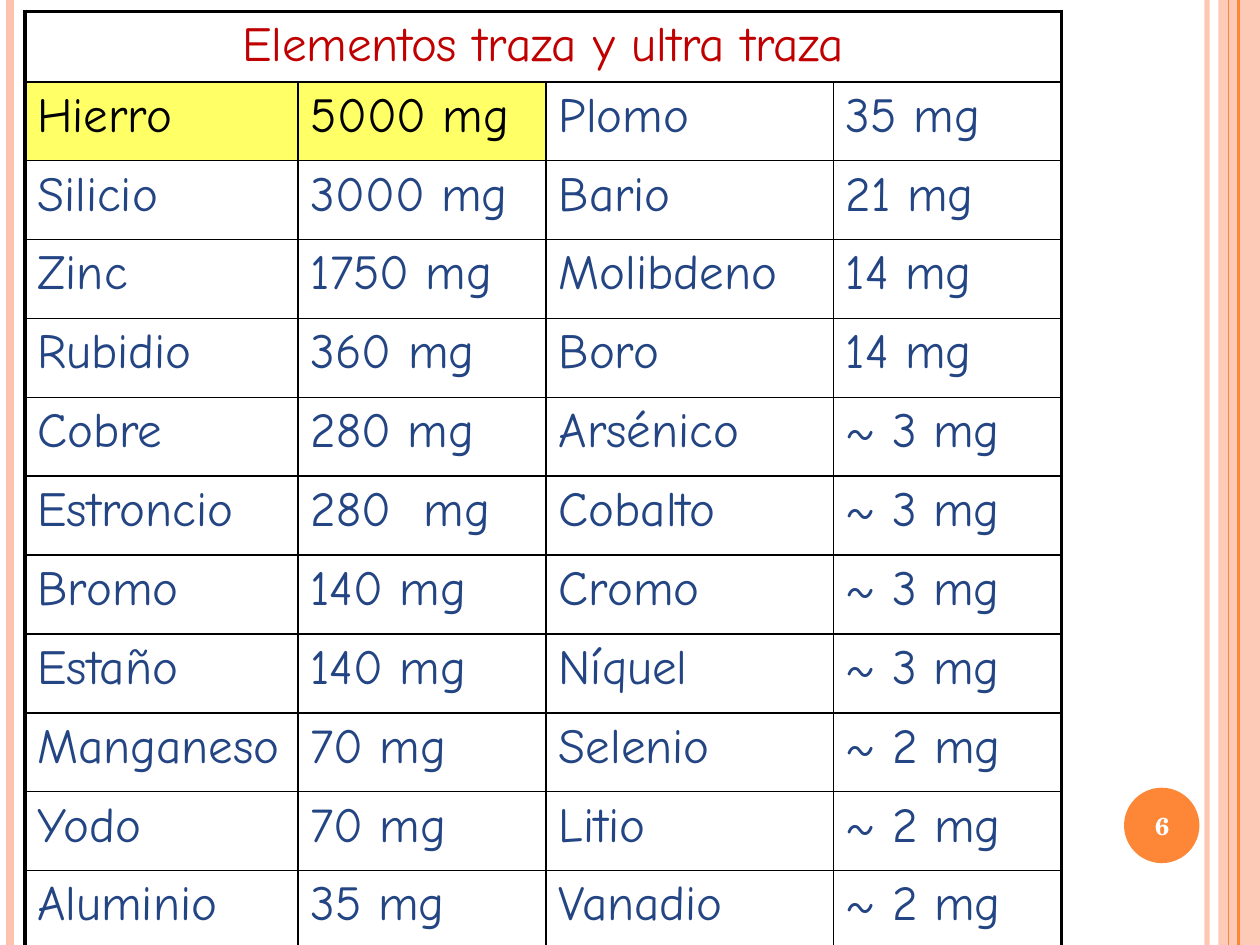
import pptx
import pptx.util
import pptx.dml.color
import pptx.enum.shapes
import pptx.enum.text
import pptx.oxml.ns
import lxml.etree as etree

Cm, Pt = pptx.util.Cm, pptx.util.Pt
ALIGN = pptx.enum.text.PP_ALIGN
SHAPE = pptx.enum.shapes.MSO_SHAPE
qn = pptx.oxml.ns.qn


def paint(fill, colour, opacity=100):
    fill.solid()
    fill.fore_color.rgb = pptx.dml.color.RGBColor.from_string(colour)
    if opacity < 100:
        tone = fill._xPr.find(qn("a:solidFill"))[0]
        etree.SubElement(tone, qn("a:alpha"), val=str(opacity * 1000))


def add_border(cell, side, width):
    line = etree.SubElement(cell._tc.get_or_add_tcPr(), qn("a:ln" + side), w=str(Pt(width)))
    solid = etree.SubElement(line, qn("a:solidFill"))
    etree.SubElement(solid, qn("a:srgbClr"), val="000000")


deck = pptx.Presentation()
deck.slide_width, deck.slide_height = Cm(25.4), Cm(19.05)
page = deck.slides.add_slide(deck.slide_layouts[6])

# Vertical stripes at both edges, with the band on the right
band = page.shapes.add_shape(SHAPE.RECTANGLE, Cm(24.56), 0, Cm(0.84), deck.slide_height)
paint(band.fill, "FEC3AE", 87)
stripes = [
    (24.33, "FEC3AE", 3, 93),
    (0.2, "FEC3AE", 4.5, 100),
    (24.97, "FE8637", 1.5, 100),
    (24.77, "FE8637", 0.75, 100),
]
for x, colour, width, opacity in stripes:
    stripe = page.shapes.add_connector(
        pptx.enum.shapes.MSO_CONNECTOR.STRAIGHT, Cm(x), 0, Cm(x), deck.slide_height)
    stripe.line.width = Pt(width)
    paint(stripe.line.fill, colour, opacity)
    etree.SubElement(stripe._element.spPr, qn("a:effectLst"))

# Disc behind the page number
disc = page.shapes.add_shape(SHAPE.OVAL, Cm(22.66), Cm(15.88), Cm(1.52), Cm(1.52))
paint(disc.fill, "FE8637")
for shape in (band, disc):
    shape.line.fill.background()
    shape.shadow.inherit = False

# Table of trace elements
rows = [
    ("Elementos traza y ultra traza", "", "", ""),
    ("Hierro", "5000 mg", "Plomo", "35 mg"),
    ("Silicio", "3000 mg", "Bario", "21 mg"),
    ("Zinc", "1750 mg", "Molibdeno", "14 mg"),
    ("Rubidio", "360 mg", "Boro", "14 mg"),
    ("Cobre", "280 mg", "Arsénico", "~ 3 mg"),
    ("Estroncio", "280  mg", "Cobalto", "~ 3 mg"),
    ("Bromo", "140 mg", "Cromo", "~ 3 mg"),
    ("Estaño", "140 mg", "Níquel", "~ 3 mg"),
    ("Manganeso", "70 mg", "Selenio", "~ 2 mg"),
    ("Yodo", "70 mg", "Litio", "~ 2 mg"),
    ("Aluminio", "35 mg", "Vanadio", "~ 2 mg"),
]
widths = [5.51, 5, 5.79, 4.6]
last_row, last_column = len(rows) - 1, len(widths) - 1
table = page.shapes.add_table(
    len(rows), len(widths), Cm(0.5), Cm(0.23), Cm(sum(widths)), Cm(18.9)).table
table.first_row = table.horz_banding = False
for column, width in zip(table.columns, widths):
    column.width = Cm(width)
for r, texts in enumerate(rows):
    table.rows[r].height = Cm(1.59 if r else 1.42)
    for c, text in enumerate(texts):
        cell = table.cell(r, c)
        # Thick frame outside, thin grid inside
        outer = {"L": c == 0, "R": c == last_column or r == 0,
                 "T": r == 0, "B": r == last_row}
        for side, thick in outer.items():
            add_border(cell, side, 2.25 if thick else 1)
        highlighted = r == 1 and c < 2
        if highlighted:
            paint(cell.fill, "FFFF66")
        else:
            cell.fill.background()
        if not text:
            continue
        cell.text = text
        para = cell.text_frame.paragraphs[0]
        para.alignment = ALIGN.JUSTIFY if r else ALIGN.CENTER
        before = etree.SubElement(para._p.get_or_add_pPr(), qn("a:spcBef"))
        etree.SubElement(before, qn("a:spcPct"), val="20000")
        para.font.name, para.font.size = "Comic Neue", Pt(28)
        colour = "C00000" if r == 0 else "000000" if highlighted else "244583"
        paint(para.font.fill, colour)
table.cell(0, 0).merge(table.cell(0, last_column))

# Page number
box = page.shapes.add_textbox(Cm(22.58), Cm(15.93), Cm(1.7), Cm(1.45))
box.text_frame.word_wrap = True
box.text_frame.vertical_anchor = pptx.enum.text.MSO_ANCHOR.MIDDLE
para = box.text_frame.paragraphs[0]
para.text = "6"
para.alignment = ALIGN.CENTER
para.font.name, para.font.size, para.font.bold = "TeX Gyre Schola", Pt(14), True
paint(para.font.fill, "FFFFFF")

deck.save("out.pptx")
